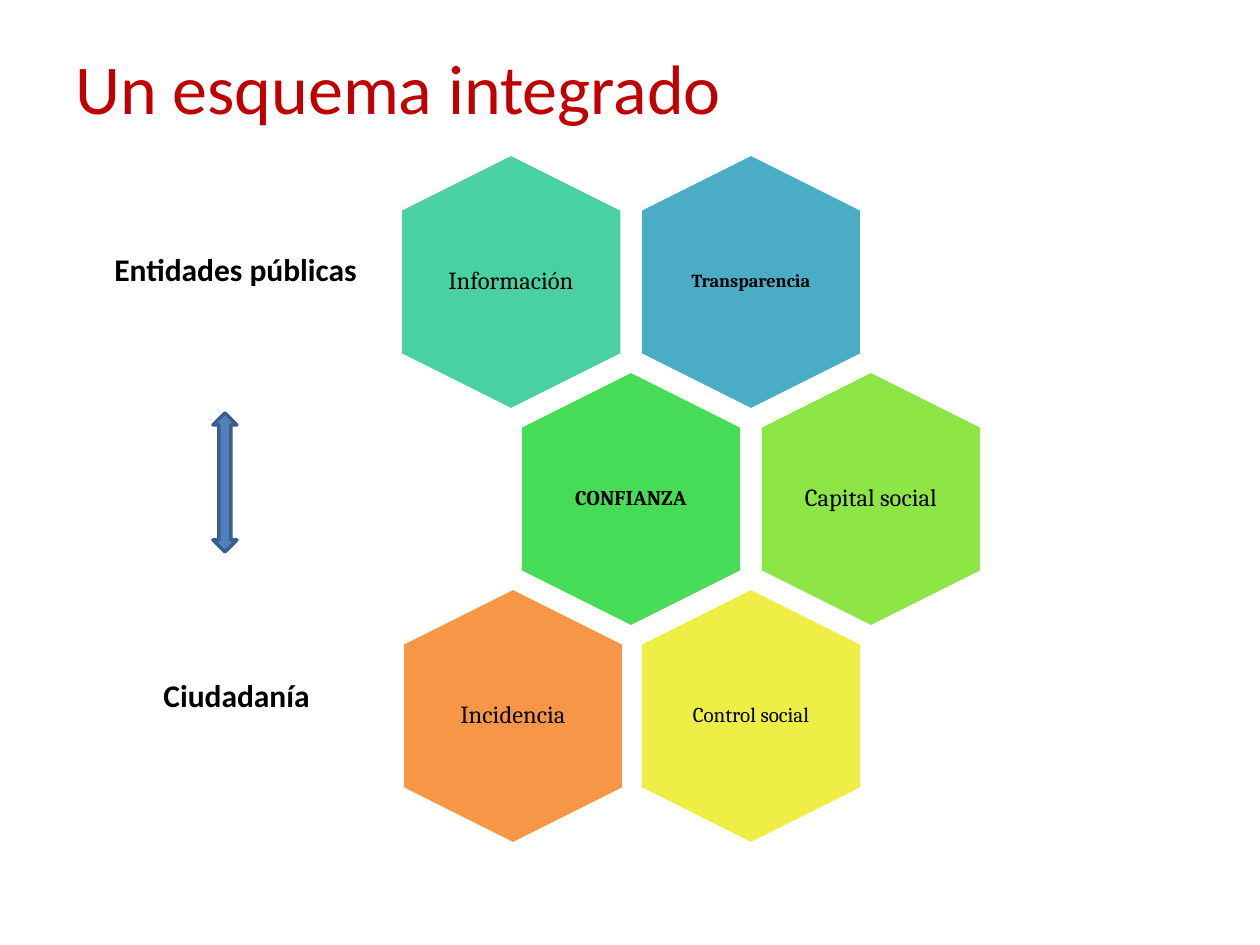
"""Builds the slide with the integrated scheme of six hexagons."""
from pptx import Presentation
from pptx.dml.color import RGBColor
from pptx.enum.shapes import MSO_SHAPE
from pptx.enum.text import MSO_ANCHOR, MSO_AUTO_SIZE, PP_ALIGN
from pptx.util import Emu, Pt

HEXAGON = MSO_SHAPE.HEXAGON
UP_DOWN_ARROW = MSO_SHAPE.UP_DOWN_ARROW
MIDDLE = MSO_ANCHOR.MIDDLE
TOP = MSO_ANCHOR.TOP
CENTER = PP_ALIGN.CENTER
LEFT = PP_ALIGN.LEFT
GROW = MSO_AUTO_SIZE.SHAPE_TO_FIT_TEXT

PX = 914400 / 126
SLIDE_SIZE = (1260, 945)
COLORS = {
    "title": "C00000", "text": "000000", "gap": "FFFFFF",
    "teal": "49D1A3", "blue": "4BACC6", "green": "47DC57",
    "lime": "8DE646", "yellow": "EEEF46", "orange": "F79646",
    "arrow": "4F81BD", "arrow_edge": "3A5F8C",
}

TITLE = ("Un esquema integrado", (63, 38, 1134, 97))
SIDE_LABELS = [
    ("Entidades públicas", (102, 244, 270, 50)),
    ("Ciudadanía", (151, 670, 173, 50)),
]
ARROW_BOX = (213, 413, 24, 139)

HEXAGONS = [
    ("Transparencia", 0, 751, "blue", 10.5, True, 6),
    ("Información", 0, 511, "teal", 14, False, 0),
    ("CONFIANZA", 1, 631, "green", 12, True, 6),
    ("Capital social", 1, 871, "lime", 14, False, 0),
    ("Control social", 2, 751, "yellow", 12, False, 6),
    ("Incidencia", 2, 513, "orange", 14, False, 0),
]
FIRST_ROW_CENTER, ROW_STEP = 282, 217
HEXAGON_SIZE = (256, 222)
LABEL_SIZE = (152, 175)


def px(value):
    return Emu(round(value * PX))


def color(name):
    return RGBColor.from_string(COLORS[name])


def centered(x, y, size):
    width, height = size
    return x - width / 2, y - height / 2, width, height


def add_figure(shapes, kind, box, fill, line):
    shape = shapes.add_shape(kind, *map(px, box))
    shape.shadow.inherit = False
    shape.fill.solid()
    shape.fill.fore_color.rgb = color(fill)
    shape.line.color.rgb = color(line)
    shape.line.width = Pt(2)
    return shape


def add_text(shapes, text, box, size, font="Calibri", ink="text", bold=False,
             align=LEFT, anchor=TOP, wrap=True):
    shape = shapes.add_textbox(*map(px, box))
    frame = shape.text_frame
    frame.word_wrap = wrap
    frame.vertical_anchor = anchor
    paragraph = frame.paragraphs[0]
    paragraph.alignment = align
    run = paragraph.add_run()
    run.text = text
    run.font.name = font
    run.font.size = Pt(size)
    run.font.bold = bold
    run.font.color.rgb = color(ink)
    return frame


def add_hexagon(shapes, text, row, x, fill, size, bold, inset):
    y = FIRST_ROW_CENTER + row * ROW_STEP
    hexagon = add_figure(shapes, HEXAGON, centered(x, y, HEXAGON_SIZE), fill, "gap")
    hexagon.adjustments[0] = 0.25
    hexagon.rotation = 90
    frame = add_text(shapes, text, centered(x, y, LABEL_SIZE), size, "Cambria",
                     bold=bold, align=CENTER, anchor=MIDDLE)
    frame.margin_left = frame.margin_right = px(inset)
    frame.margin_top = frame.margin_bottom = px(inset)
    frame.paragraphs[0].line_spacing = 0.9


def main():
    presentation = Presentation()
    presentation.slide_width, presentation.slide_height = map(px, SLIDE_SIZE)
    slide = presentation.slides.add_slide(presentation.slide_layouts[6])
    add_text(slide.shapes, *TITLE, 40, ink="title", anchor=MIDDLE)
    group = slide.shapes.add_group_shape()
    for hexagon in HEXAGONS:
        add_hexagon(group.shapes, *hexagon)
    for text, box in SIDE_LABELS:
        frame = add_text(slide.shapes, text, box, 18, bold=True, wrap=False)
        frame.auto_size = GROW
    add_figure(slide.shapes, UP_DOWN_ARROW, ARROW_BOX, "arrow", "arrow_edge")
    presentation.save("out.pptx")


if __name__ == "__main__":
    main()
